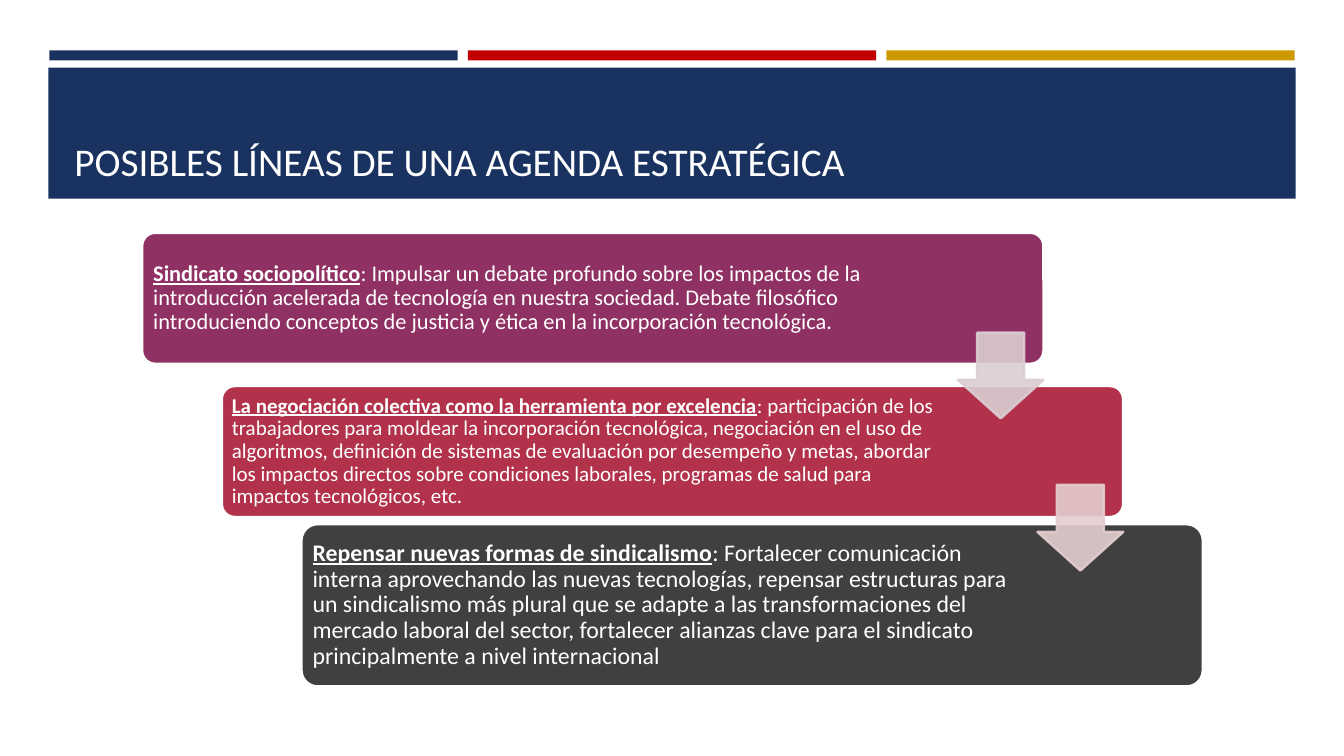
import pptx
import pptx.dml.color
import pptx.enum.shapes
import pptx.enum.text
import pptx.oxml.ns
import pptx.util
import lxml.etree

SHAPES = pptx.enum.shapes.MSO_SHAPE
ANCHORS = pptx.enum.text.MSO_ANCHOR
EMU_PER_PX = 9144


def px(length):
    return pptx.util.Emu(length * EMU_PER_PX)


def color(hex_value):
    return pptx.dml.color.RGBColor.from_string(hex_value)


class SlideBuilder:
    """Draws styled elements on the current slide, with lengths in px (100 per inch)."""

    font = "Calibri"
    white = "FFFFFF"
    outline = 1.75

    def __init__(self, slide):
        self.slide = slide

    def shape(self, kind, box, fill, line=None, adjustments=()):
        element = self.slide.shapes.add_shape(kind, *map(px, box))
        element.shadow.inherit = False
        element.fill.solid()
        element.fill.fore_color.rgb = color(fill)
        if line:
            element.line.color.rgb = color(line)
            element.line.width = pptx.util.Pt(self.outline)
        else:
            element.line.fill.background()
        for index, value in enumerate(adjustments):
            element.adjustments[index] = value
        return element

    def bar(self, box, fill):
        return self.shape(SHAPES.RECTANGLE, box, fill)

    def card(self, box, fill):
        return self.shape(SHAPES.ROUNDED_RECTANGLE, box, fill, self.white, [0.1])

    def arrow(self, left, top, fill):
        arrow = self.shape(SHAPES.DOWN_ARROW, (left, top, 85, 85), fill, fill, [0.55, 0.45])
        for tint in arrow._element.spPr.iter(pptx.oxml.ns.qn("a:srgbClr")):
            lxml.etree.SubElement(tint, pptx.oxml.ns.qn("a:alpha"), val="90000")

    def text(self, box, runs, size, anchor, insets, line_spacing=1.0):
        frame = self.slide.shapes.add_textbox(*map(px, box)).text_frame
        frame.word_wrap = True
        frame.vertical_anchor = anchor
        frame.margin_left, frame.margin_top, frame.margin_right, frame.margin_bottom = map(px, insets)
        paragraph = frame.paragraphs[0]
        paragraph.line_spacing = line_spacing
        for words, emphasized in runs:
            run = paragraph.add_run()
            run.text = words
            run.font.name = self.font
            run.font.size = pptx.util.Pt(size)
            run.font.color.rgb = color(self.white)
            run.font.bold = emphasized
            run.font.underline = emphasized


AGENDA = [
    (231, 130, "903163", 754, 16, 7, "Sindicato sociopolítico",
     ": Impulsar un debate profundo sobre los impactos de la introducción acelerada de "
     "tecnología en nuestra sociedad. Debate filosófico introduciendo conceptos de justicia "
     "y ética en la incorporación tecnológica."),
    (383, 130, "B2324B", 723, 15, 6, "La negociación colectiva como la herramienta por excelencia",
     ": participación de los trabajadores para moldear la incorporación tecnológica, "
     "negociación en el uso de algoritmos, definición de sistemas de evaluación por desempeño "
     "y metas, abordar los impactos directos sobre condiciones laborales, programas de salud "
     "para impactos tecnológicos, etc."),
    (520, 161, "404040", 721, 17, 7, "Repensar nuevas formas de sindicalismo",
     ": Fortalecer comunicación interna aprovechando las nuevas tecnologías, repensar "
     "estructuras para un sindicalismo más plural que se adapte a las transformaciones del "
     "mercado laboral del sector, fortalecer alianzas clave para el sindicato principalmente "
     "a nivel internacional"),
]
STEP = 79


def main():
    presentation = pptx.Presentation()
    presentation.slide_width, presentation.slide_height = px(1333), px(750)
    builder = SlideBuilder(presentation.slides.add_slide(presentation.slide_layouts[6]))

    for index, accent in enumerate(["1A3260", "C00000", "CC9900"]):
        builder.bar((49 + 415 * index, 50, 405, 10), accent)
    builder.bar((48, 67, 1237, 130), "1A3260")
    builder.text((64, 77, 1206, 111), [("POSIBLES LÍNEAS DE UNA AGENDA ESTRATÉGICA", False)],
                 28, ANCHORS.BOTTOM, (10, 5, 10, 5))

    for index, (top, height, fill, text_width, size, inset, heading, detail) in enumerate(AGENDA):
        left = 141 + STEP * index
        builder.card((left, top, 894, height), fill)
        builder.text((left + 4, top + 4, text_width, height - 8),
                     [(heading, True), (detail, False)],
                     size, ANCHORS.MIDDLE, [inset] * 4, 0.9)

    for index, fill in enumerate(["DBCED3", "E4CED0"]):
        builder.arrow(950 + STEP * index, 330 + 151 * index, fill)

    presentation.save("out.pptx")


if __name__ == "__main__":
    main()
